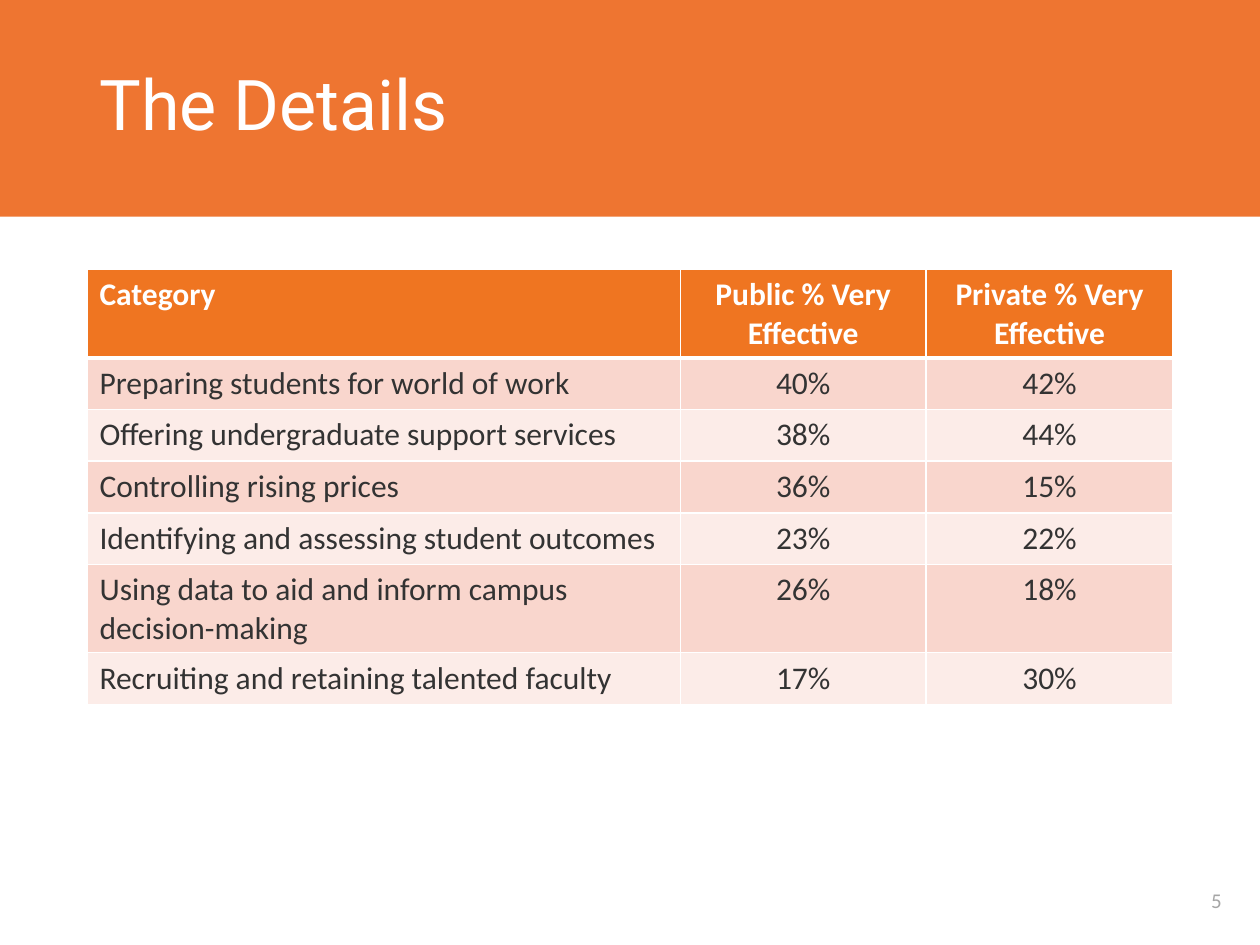
from lxml.etree import SubElement
from pptx import Presentation
from pptx.dml.color import RGBColor
from pptx.enum.shapes import MSO_SHAPE
from pptx.enum.text import MSO_ANCHOR, PP_ALIGN
from pptx.oxml.ns import qn
from pptx.util import Inches, Pt

TITLE = "The Details"
PAGE_NUMBER = "5"
HEADER = ("Category", "Public % Very Effective", "Private % Very Effective")
RATINGS = [
    ("Preparing students for world of work", "40%", "42%"),
    ("Offering undergraduate support services", "38%", "44%"),
    ("Controlling rising prices", "36%", "15%"),
    ("Identifying and assessing student outcomes", "23%", "22%"),
    ("Using data to aid and inform campus decision-making", "26%", "18%"),
    ("Recruiting and retaining talented faculty", "17%", "30%"),
]

WHITE, DARK, GREY = "FFFFFF", "333333", "A6A6A6"
BANNER_ORANGE, HEADER_ORANGE = "EE7531", "EF7521"
BANDS = ("F9D6CD", "FCECE8")
COLUMN_WIDTHS = (4.71, 1.95, 1.96)
ROW_HEIGHT = 0.41
LEFT, WIDTH = 0.69, 8.62


def paint(color_format, color):
    color_format.rgb = RGBColor.from_string(color)


def fill_solid(item, color):
    item.fill.solid()
    paint(item.fill.fore_color, color)


def style(paragraph, font_name, size, color, align, bold=False):
    paragraph.alignment = align
    font = paragraph.font
    font.name, font.size, font.bold = font_name, Pt(size), bold
    paint(font.color, color)


def add_label(slide, text, box, font_name, size, color, align):
    label = slide.shapes.add_textbox(*map(Inches, box))
    frame = label.text_frame
    frame.word_wrap = True
    frame.vertical_anchor = MSO_ANCHOR.MIDDLE
    frame.text = text
    style(frame.paragraphs[0], font_name, size, color, align)
    return frame.paragraphs[0]


def set_borders(cell, widths):
    """Draw white cell borders; widths maps the sides L, R, T, B to points."""
    properties = cell._tc.get_or_add_tcPr()
    for side, width in widths.items():
        line = SubElement(properties, qn(f"a:ln{side}"), w=str(Pt(width)))
        SubElement(SubElement(line, qn("a:solidFill")), qn("a:srgbClr"), val=WHITE)


def add_ratings_table(slide):
    rows = [HEADER, *RATINGS]
    table = slide.shapes.add_table(
        len(rows), len(HEADER), Inches(LEFT), Inches(2.14),
        Inches(WIDTH), Inches(ROW_HEIGHT * len(rows))).table
    for column, width in zip(table.columns, COLUMN_WIDTHS):
        column.width = Inches(width)
    for r, values in enumerate(rows):
        is_header = r == 0
        table.rows[r].height = Inches(ROW_HEIGHT)
        background = HEADER_ORANGE if is_header else BANDS[(r - 1) % 2]
        top, bottom = 3 if r == 1 else 1, 3 if is_header else 1
        for c, value in enumerate(values):
            cell = table.cell(r, c)
            cell.text = value
            style(cell.text_frame.paragraphs[0], "Calibri", 18,
                  WHITE if is_header else DARK,
                  PP_ALIGN.CENTER if c else PP_ALIGN.LEFT, is_header)
            set_borders(cell, {"L": 1, "R": 1, "T": top, "B": bottom})
            fill_solid(cell, background)


def main():
    deck = Presentation()
    deck.slide_width, deck.slide_height = Inches(10), Inches(7.5)
    slide = deck.slides.add_slide(deck.slide_layouts[6])

    banner = slide.shapes.add_shape(
        MSO_SHAPE.RECTANGLE, Inches(-0.01), 0, Inches(10.02), Inches(1.72))
    banner.shadow.inherit = False
    fill_solid(banner, BANNER_ORANGE)
    banner.line.fill.background()

    add_label(slide, PAGE_NUMBER, (9.31, 6.95, 0.69, 0.39),
              "Calibri", 12, GREY, PP_ALIGN.CENTER)
    title = add_label(slide, TITLE, (LEFT, 0, WIDTH, 1.71),
                      "Roboto", 40, WHITE, PP_ALIGN.LEFT)
    title.line_spacing = 0.9
    add_ratings_table(slide)
    deck.save("out.pptx")


if __name__ == "__main__":
    main()
